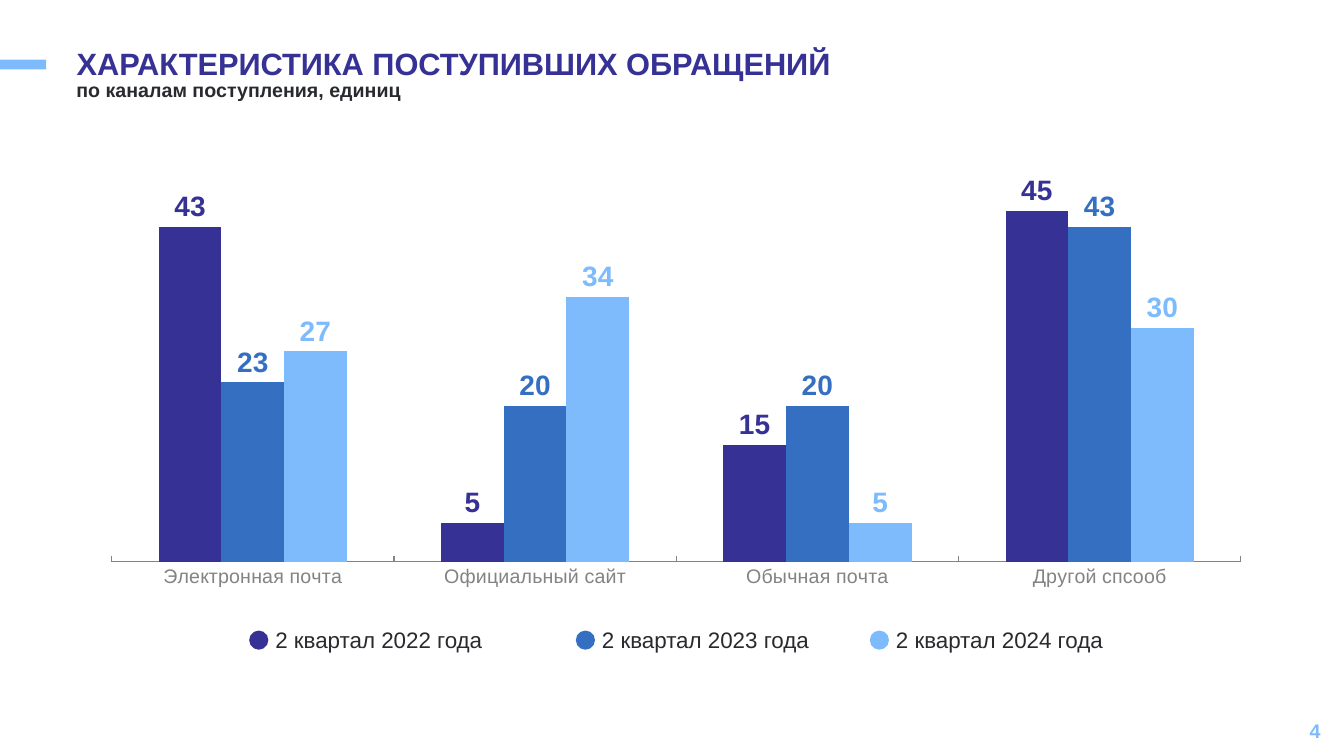
"""Build a slide with a clustered column chart of incoming requests by channel."""
import pptx
import pptx.chart.data
import pptx.dml.color
import pptx.enum.chart
import pptx.enum.shapes
import pptx.enum.text
import pptx.oxml
import pptx.util

Pt = pptx.util.Pt
FONT = "Arial"
COLORS = {
    "indigo": "363194",
    "blue": "346FC2",
    "sky": "7DBBFC",
    "text": "282A2E",
    "axis": "838383",
}
CHANNELS = ["Электронная почта", "Официальный сайт", "Обычная почта", "Другой спсооб"]
QUARTERS = [
    ("2 квартал 2022 года", "indigo", [43, 5, 15, 45], 178),
    ("2 квартал 2023 года", "blue", [23, 20, 20, 43], 411.3),
    ("2 квартал 2024 года", "sky", [27, 34, 5, 30], 621.3),
]
PLOT_LAYOUT = {"x": 0.022, "y": 0.024, "w": 0.956, "h": 0.871}


def rgb(name):
    return pptx.dml.color.RGBColor.from_string(COLORS[name])


def format_font(font, size, color, bold=False):
    font.name = FONT
    font.size = Pt(size)
    font.bold = bold
    font.color.rgb = rgb(color)


def place(shape, left, top, width, height):
    shape.left, shape.top = Pt(left), Pt(top)
    shape.width, shape.height = Pt(width), Pt(height)


def fill_text(shape, text, size, color, bold=False, wrap=True):
    frame = shape.text_frame
    frame.text = text
    frame.word_wrap = wrap
    frame.auto_size = pptx.enum.text.MSO_AUTO_SIZE.NONE
    frame.vertical_anchor = pptx.enum.text.MSO_ANCHOR.TOP
    paragraph = frame.paragraphs[0]
    paragraph.alignment = pptx.enum.text.PP_ALIGN.LEFT
    format_font(paragraph.runs[0].font, size, color, bold)
    return paragraph


def add_text(slide, box, text, size, color, bold=False, wrap=True):
    shape = slide.shapes.add_textbox(*map(Pt, box))
    return fill_text(shape, text, size, color, bold, wrap)


def add_filled_shape(slide, kind, box, color):
    shape = slide.shapes.add_shape(kind, *map(Pt, box))
    shape.shadow.inherit = False
    shape.fill.solid()
    shape.fill.fore_color.rgb = rgb(color)
    shape.line.fill.background()


def add_title(slide, text):
    title = slide.shapes.title
    place(title, 47.5, 31, 623.5, 41)
    fill_text(title, text, 22, "indigo", bold=True).line_spacing = 0.9


def add_legend_entry(slide, left, label, color):
    oval = pptx.enum.shapes.MSO_SHAPE.OVAL
    add_filled_shape(slide, oval, (left, 450.4, 13.7, 13.7), color)
    add_text(slide, (left + 11.6, 443.8, 164, 26.6), label, 16, "text", wrap=False)


def set_plot_layout(chart):
    plot_area = chart.plots[0]._element.getparent()
    for layout in plot_area.findall(pptx.oxml.ns.qn("c:layout")):
        plot_area.remove(layout)
    values = "".join(f'<c:{key} val="{value}"/>' for key, value in PLOT_LAYOUT.items())
    plot_area.insert(0, pptx.oxml.parse_xml(
        f'<c:layout {pptx.oxml.ns.nsdecls("c")}><c:manualLayout>'
        '<c:layoutTarget val="inner"/><c:xMode val="edge"/><c:yMode val="edge"/>'
        f'{values}</c:manualLayout></c:layout>'))


def format_axes(chart):
    tick_mark = pptx.enum.chart.XL_TICK_MARK
    category_axis = chart.category_axis
    category_axis.has_major_gridlines = False
    category_axis.major_tick_mark = tick_mark.INSIDE
    category_axis.minor_tick_mark = tick_mark.NONE
    category_axis.format.line.color.rgb = rgb("axis")
    category_axis.format.line.width = Pt(0.75)
    format_font(category_axis.tick_labels.font, 14, "axis")
    value_axis = chart.value_axis
    value_axis.minimum_scale = 0
    value_axis.maximum_scale = 50
    value_axis.has_major_gridlines = False
    value_axis.visible = False


def format_series(series, color):
    series.format.fill.solid()
    series.format.fill.fore_color.rgb = rgb(color)
    series.invert_if_negative = False
    labels = series.data_labels
    labels.show_value = True
    labels.position = pptx.enum.chart.XL_LABEL_POSITION.OUTSIDE_END
    format_font(labels.font, 20, color, bold=True)


def add_channel_chart(slide):
    data = pptx.chart.data.CategoryChartData()
    data.categories = CHANNELS
    for name, _, values, _ in QUARTERS:
        data.add_series(name, values)
    kind = pptx.enum.chart.XL_CHART_TYPE.COLUMN_CLUSTERED
    box = map(Pt, (61.2, 115.2, 843.8, 319.7))
    chart = slide.shapes.add_chart(kind, *box, data).chart
    chart.has_title = False
    chart.has_legend = False
    format_font(chart.font, 18, "text")
    plot = chart.plots[0]
    plot.gap_width = 150
    plot.overlap = 0
    plot.vary_by_categories = False
    for series, (_, color, _, _) in zip(plot.series, QUARTERS):
        format_series(series, color)
    format_axes(chart)
    set_plot_layout(chart)


def add_slide_number(slide, number):
    paragraph = add_text(slide, (734.4, 507.6, 216, 28.8), number, 14, "sky", bold=True)
    paragraph.alignment = pptx.enum.text.PP_ALIGN.RIGHT
    slide.shapes[-1].text_frame.vertical_anchor = pptx.enum.text.MSO_ANCHOR.MIDDLE


def main():
    presentation = pptx.Presentation()
    presentation.slide_width, presentation.slide_height = Pt(960), Pt(540)
    slide = presentation.slides.add_slide(presentation.slide_layouts[5])
    rectangle = pptx.enum.shapes.MSO_SHAPE.RECTANGLE
    add_filled_shape(slide, rectangle, (0, 42.6, 33, 7), "sky")
    add_title(slide, "ХАРАКТЕРИСТИКА ПОСТУПИВШИХ ОБРАЩЕНИЙ")
    subtitle = add_text(slide, (47.5, 54, 623.5, 28.8),
                        "по каналам поступления, единиц", 14, "text", bold=True)
    subtitle.line_spacing = 0.9
    add_channel_chart(slide)
    for label, color, _, left in QUARTERS:
        add_legend_entry(slide, left, label, color)
    add_slide_number(slide, "4")
    presentation.save("out.pptx")


if __name__ == "__main__":
    main()
